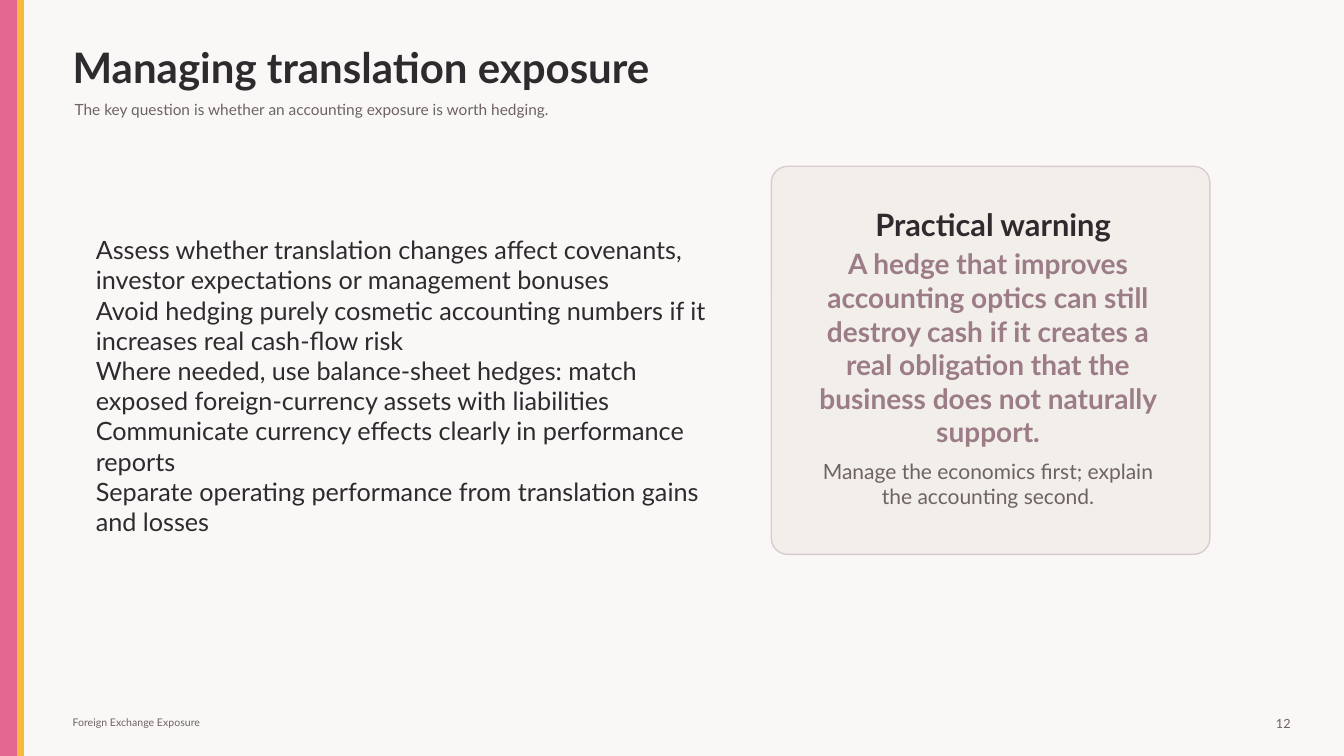
from dataclasses import dataclass

from lxml.etree import SubElement
from pptx import Presentation
from pptx.dml.color import RGBColor
from pptx.enum.shapes import MSO_SHAPE
from pptx.enum.text import MSO_ANCHOR, MSO_AUTO_SIZE, PP_ALIGN
from pptx.oxml.ns import qn
from pptx.util import Inches, Pt


@dataclass(frozen=True)
class Theme:
    font: str = "Lato"
    paper: str = "FAF8F6"
    ink: str = "2F2A2D"
    muted: str = "6D6264"
    pink: str = "E46791"
    gold: str = "FAB938"
    mauve: str = "9B7C87"
    card: str = "F2EEEA"
    card_line: str = "D8CCD0"
    title_size: float = 30
    heading_size: float = 22
    warning_size: float = 20
    body_size: float = 18
    advice_size: float = 15
    subtitle_size: float = 11
    number_size: float = 9
    footer_size: float = 7.5


def write_text(box, lines, font, size, color, bold=False, align=PP_ALIGN.LEFT):
    frame = box.text_frame
    frame.word_wrap = True
    frame.auto_size = MSO_AUTO_SIZE.NONE
    frame.vertical_anchor = MSO_ANCHOR.MIDDLE
    frame.margin_left = frame.margin_right = 0
    frame.margin_top = frame.margin_bottom = 0
    for index, line in enumerate(lines):
        para = frame.add_paragraph() if index else frame.paragraphs[0]
        para.alignment = align
        para.space_before = Pt(0)
        span = para.add_run()
        span.text = line
        span.font.name = font
        span.font.size = Pt(size)
        span.font.bold = bold
        span.font.color.rgb = RGBColor.from_string(color)


class SlideBuilder:
    def __init__(self, page, theme):
        self.page = page
        self.theme = theme

    def background(self):
        fill = self.page.background.fill
        fill.solid()
        fill.fore_color.rgb = RGBColor.from_string(self.theme.paper)

    def shape(self, kind, area, fill, line):
        box = self.page.shapes.add_shape(kind, *map(Inches, area))
        box.shadow.inherit = False
        box.fill.solid()
        box.fill.fore_color.rgb = RGBColor.from_string(fill)
        box.line.color.rgb = RGBColor.from_string(line)
        box.line.width = Pt(1)
        return box

    def text(self, area, line, size, color, **style):
        box = self.page.shapes.add_textbox(*map(Inches, area))
        write_text(box, [line], self.theme.font, size, color, **style)

    def placeholder(self, box, area, lines, size, **style):
        box.left, box.top, box.width, box.height = map(Inches, area)
        write_text(box, lines, self.theme.font, size, self.theme.ink, **style)

    def title(self, area, line):
        self.placeholder(self.page.shapes.title, area, [line], self.theme.title_size, bold=True)

    def body(self, area, lines):
        box = self.page.placeholders[1]
        self.placeholder(box, area, lines, self.theme.body_size)
        for para in box.text_frame.paragraphs:
            properties = para._p.get_or_add_pPr()
            properties.set("marL", "0")
            properties.set("indent", "0")
            SubElement(properties, qn("a:buNone"))


def main():
    theme = Theme()
    deck = Presentation()
    deck.slide_width, deck.slide_height = Inches(13.33), Inches(7.5)
    page = deck.slides.add_slide(deck.slide_layouts[1])
    builder = SlideBuilder(page, theme)

    builder.background()
    builder.shape(MSO_SHAPE.RECTANGLE, (0, 0, 0.18, 7.5), theme.pink, theme.pink)
    builder.shape(MSO_SHAPE.RECTANGLE, (0.18, 0, 0.05, 7.5), theme.gold, theme.gold)

    builder.title((0.72, 0.42, 11.9, 0.48), "Managing translation exposure")
    builder.text((0.74, 0.94, 11.4, 0.28),
                 "The key question is whether an accounting exposure is worth hedging.",
                 theme.subtitle_size, theme.muted)
    builder.text((0.72, 7.08, 3.5, 0.18), "Foreign Exchange Exposure",
                 theme.footer_size, theme.muted)
    builder.text((12.45, 7.05, 0.35, 0.25), "12", theme.number_size, theme.muted,
                 align=PP_ALIGN.RIGHT)

    builder.body((0.95, 1.55, 6.2, 4.55), [
        "Assess whether translation changes affect covenants, "
        "investor expectations or management bonuses",
        "Avoid hedging purely cosmetic accounting numbers if it increases real cash-flow risk",
        "Where needed, use balance-sheet hedges: match "
        "exposed foreign-currency assets with liabilities",
        "Communicate currency effects clearly in performance reports",
        "Separate operating performance from translation gains and losses",
    ])

    card = builder.shape(MSO_SHAPE.ROUNDED_RECTANGLE, (7.65, 1.65, 4.35, 3.85),
                         theme.card, theme.card_line)
    card.adjustments[0] = 0.042
    builder.text((8, 2.05, 3.7, 0.35), "Practical warning",
                 theme.heading_size, theme.ink, bold=True, align=PP_ALIGN.CENTER)
    builder.text((8.1, 2.75, 3.4, 1.4),
                 "A hedge that improves accounting optics can still destroy cash if it creates "
                 "a real obligation that the business does not naturally support.",
                 theme.warning_size, theme.mauve, bold=True, align=PP_ALIGN.CENTER)
    builder.text((8.15, 4.55, 3.3, 0.5),
                 "Manage the economics first; explain the accounting second.",
                 theme.advice_size, theme.muted, align=PP_ALIGN.CENTER)

    deck.save("out.pptx")


if __name__ == "__main__":
    main()
